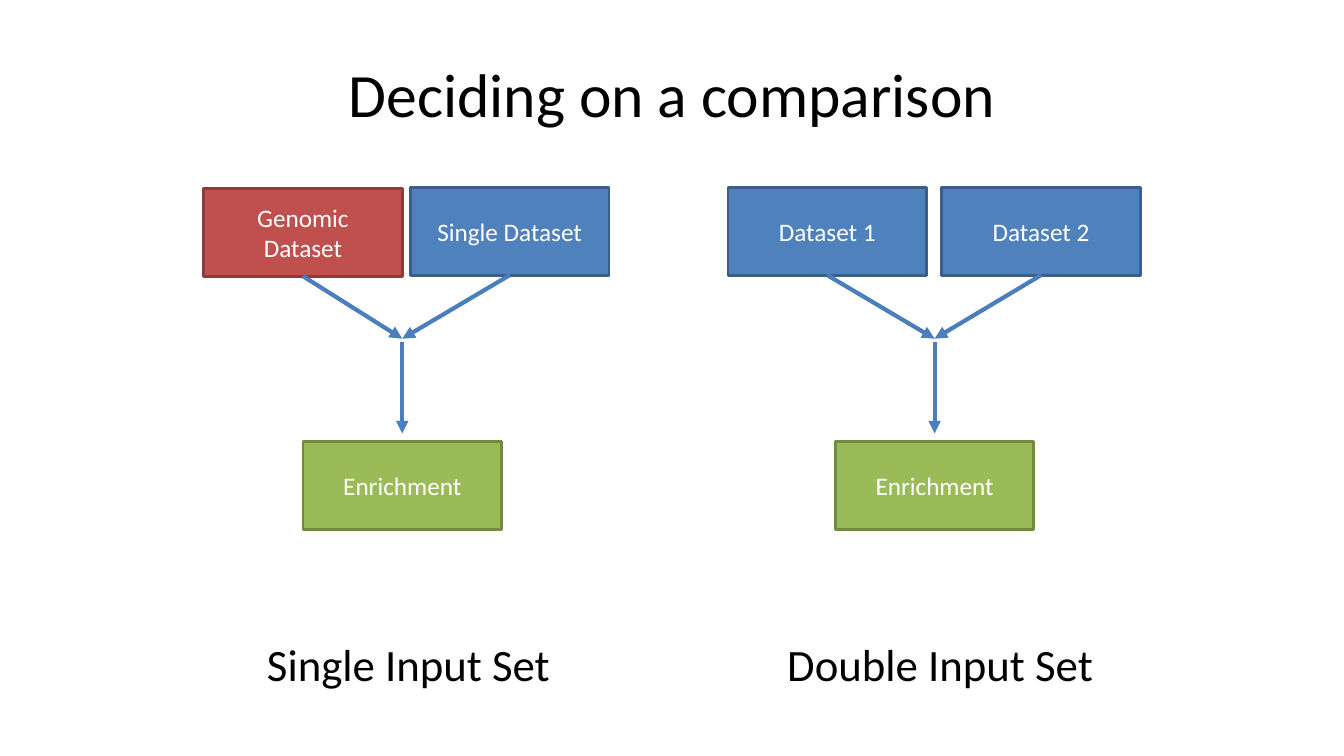
from dataclasses import dataclass
from pptx import Presentation
from pptx.dml.color import RGBColor as RGB
from pptx.enum.shapes import MSO_CONNECTOR as LINK, MSO_SHAPE as SHAPE
from pptx.enum.text import MSO_ANCHOR as ANCHOR, MSO_AUTO_SIZE as FIT, PP_ALIGN as ALIGN
from pptx.oxml.ns import qn
from pptx.util import Inches, Pt
from lxml.etree import SubElement as Sub


@dataclass(frozen=True)
class Theme:
    font: str = "Calibri"
    ink: str = "000000"
    white: str = "FFFFFF"
    arrow: str = "4B7EBC"
    blue: tuple = ("4F81BD", "3A5F8C")
    red: tuple = ("C0504D", "8E3B39")
    green: tuple = ("9BBB59", "738A42")
    title: int = 44
    label: int = 32
    body: int = 18
    edge: int = 2
    stroke: int = 3


THEME = Theme()
WIDE, HIGH = 1.97, 0.87
TOP, JOIN, STEM, TIP, BASE = 1.86, 3.36, 3.39, 4.3, 4.38


def write(frame, text, size, color, align):
    frame.text = text
    for para in frame.paragraphs:
        para.alignment = align
        para.font.name = THEME.font
        para.font.size = Pt(size)
        para.font.color.rgb = RGB.from_string(color)


def add_text(slide, text, left, top, width, height, size, align, wrap):
    area = slide.shapes.add_textbox(Inches(left), Inches(top), Inches(width), Inches(height))
    frame = area.text_frame
    frame.word_wrap = wrap
    frame.auto_size = FIT.NONE if wrap else FIT.SHAPE_TO_FIT_TEXT
    frame.vertical_anchor = ANCHOR.MIDDLE if wrap else ANCHOR.TOP
    write(frame, text, size, THEME.ink, align)


def add_box(slide, text, left, top, colors):
    box = slide.shapes.add_shape(
        SHAPE.RECTANGLE, Inches(left), Inches(top), Inches(WIDE), Inches(HIGH))
    fill, edge = colors
    box.shadow.inherit = False
    box.fill.solid()
    box.fill.fore_color.rgb = RGB.from_string(fill)
    box.line.color.rgb = RGB.from_string(edge)
    box.line.width = Pt(THEME.edge)
    box.text_frame.word_wrap = True
    box.text_frame.vertical_anchor = ANCHOR.MIDDLE
    write(box.text_frame, text, THEME.body, THEME.white, ALIGN.CENTER)
    return box


def add_arrow(slide, mid, start, end, box=None):
    arrow = slide.shapes.add_connector(
        LINK.STRAIGHT, Inches(mid), Inches(start), Inches(mid), Inches(end))
    if box is not None:
        arrow.begin_connect(box, 2)
    arrow.line.color.rgb = RGB.from_string(THEME.arrow)
    arrow.line.width = Pt(THEME.stroke)
    Sub(arrow.line._get_or_add_ln(), qn("a:tailEnd"), type="triangle")
    Sub(arrow._element.spPr, qn("a:effectLst"))


def add_flow(slide, mid, inputs, label, left, width):
    for text, side, top, colors in inputs:
        box = add_box(slide, text, side, top, colors)
        add_arrow(slide, mid, top + HIGH, JOIN, box)
    add_arrow(slide, mid, STEM, TIP)
    add_box(slide, "Enrichment", mid - WIDE / 2, BASE, THEME.green)
    add_text(slide, label, left, 6.27, width, 0.64, THEME.label, ALIGN.LEFT, False)


def main():
    deck = Presentation()
    deck.slide_width, deck.slide_height = Inches(13.33), Inches(7.5)
    slide = deck.slides.add_slide(deck.slide_layouts[6])
    add_text(slide, "Deciding on a comparison", 0.67, 0.3, 12, 1.25,
             THEME.title, ALIGN.CENTER, True)
    single = [("Genomic\nDataset", 2.02, TOP + 0.01, THEME.red),
              ("Single Dataset", 4.07, TOP, THEME.blue)]
    double = [("Dataset 1", 7.22, TOP, THEME.blue),
              ("Dataset 2", 9.34, TOP, THEME.blue)]
    add_flow(slide, 3.99, single, "Single Input Set", 2.55, 3.04)
    add_flow(slide, 9.27, double, "Double Input Set", 7.71, 3.27)
    deck.save("out.pptx")


if __name__ == "__main__":
    main()
